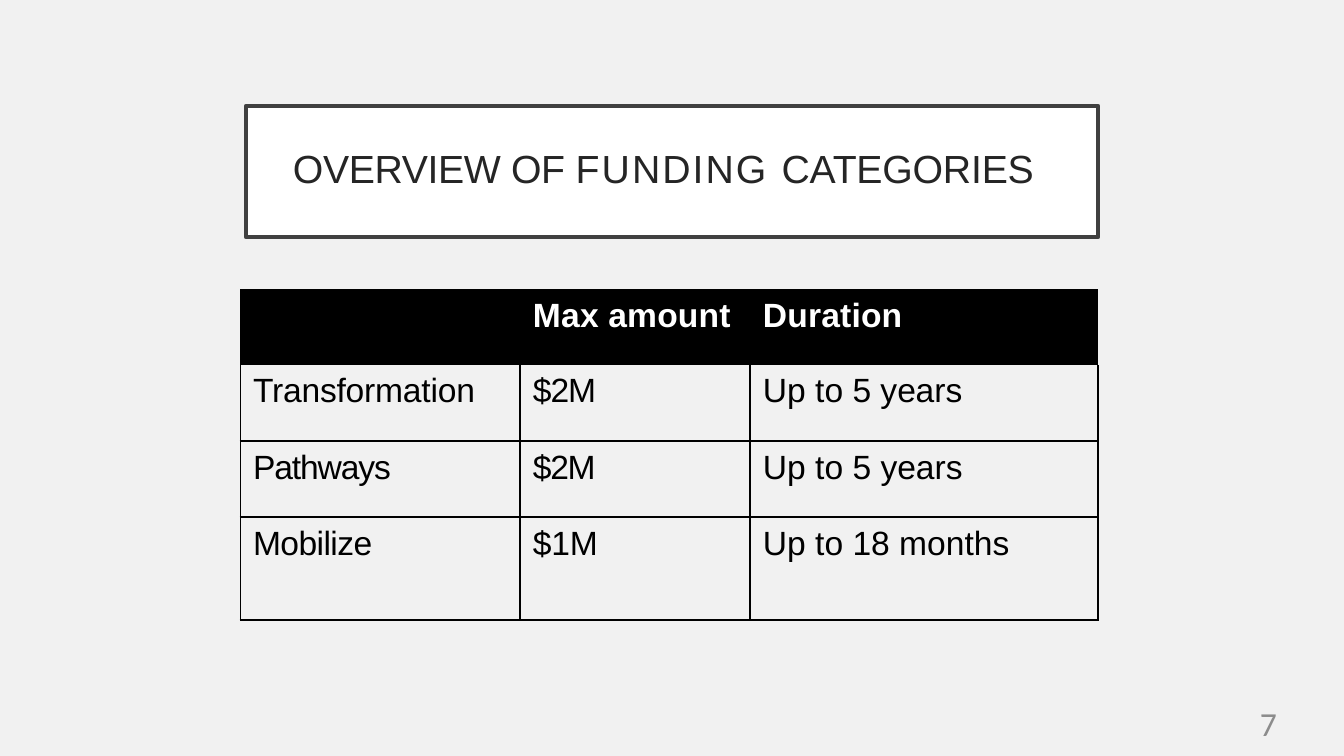
from lxml.etree import SubElement
from pptx import Presentation
from pptx.dml.color import RGBColor
from pptx.enum.text import MSO_ANCHOR, MSO_AUTO_SIZE, PP_ALIGN
from pptx.oxml.ns import qn
from pptx.util import Emu, Pt

BLACK = RGBColor(0x00, 0x00, 0x00)
WHITE = RGBColor(0xFF, 0xFF, 0xFF)
PALE = RGBColor(0xF1, 0xF1, 0xF1)
FRAME = RGBColor(0x40, 0x40, 0x40)
INK = RGBColor(0x25, 0x25, 0x25)
GREY = RGBColor(0x8C, 0x8C, 0x8C)

YEARS = [("y", -0.3), ("ea", -0.1), ("rs", 0)]
TITLE = [("OVERVIEW OF ", -0.2), ("FUNDING ", 1.1), ("CATEGORIES", -0.1)]
ROWS = [
    [[], [("Max amount", 0.1)], [("Duration", 0.1)]],
    [[("Transformation", -0.1)], [("$2M", -0.6)], [("Up to ", 0), ("5 ", -0.1)] + YEARS],
    [[("Pathways", -0.6)], [("$2M", -0.7)], [("Up to 5 ", 0)] + YEARS],
    [[("Mobilize", -0.3)], [("$1M", -0.1)], [("Up to 18 months", 0)]],
]
COL_WIDTHS = [280, 230, 348]
ROW_HEIGHTS = [76, 76, 76, 103]
SPACE_BEFORE = [3.3, 2.5, 3, 3]
TOP_MARGINS = [8, 7, 8, 8]


def px(n):
    """Turn px into EMU."""
    return Emu(round(n * 9144000 / 1344))


def set_attrs(obj, values):
    """Set each attribute named in a dict."""
    for name, value in values.items():
        setattr(obj, name, value)


def set_margins(obj, top=0):
    """Clear the text margins but for the top one."""
    set_attrs(obj, {"margin_left": 0, "margin_right": 0, "margin_bottom": 0,
                    "margin_top": px(top)})


def add_runs(p, runs, font, color, indent=0, **para):
    """Fill a paragraph with letter-spaced runs."""
    set_attrs(p, para)
    p._p.get_or_add_pPr().set("marL", str(px(indent)))
    for text, spacing in runs:
        r = p.add_run()
        r.text = text
        set_attrs(r.font, font)
        r.font.color.rgb = color
        r._r.get_or_add_rPr().set("spc", str(round(spacing * 100)))


def set_borders(cell, widths):
    """Draw the left, right, top and bottom cell borders, none at zero."""
    tcPr = cell._tc.get_or_add_tcPr()
    for side, width in zip("LRTB", widths):
        ln = SubElement(tcPr, qn(f"a:ln{side}"), w=str(Pt(width)))
        if width:
            fill = SubElement(ln, qn("a:solidFill"))
            SubElement(fill, qn("a:srgbClr"), val=str(BLACK))
        else:
            SubElement(ln, qn("a:noFill"))


def format_title(sp):
    """Place and fill the framed title."""
    set_attrs(sp, {"left": px(246), "top": px(106), "width": px(852), "height": px(131)})
    sp.fill.solid()
    sp.fill.fore_color.rgb = WHITE
    sp.line.color.rgb = FRAME
    sp.line.width = Pt(2.5)
    tf = sp.text_frame
    set_margins(tf, 38)
    set_attrs(tf, {"word_wrap": True, "auto_size": MSO_AUTO_SIZE.NONE,
                   "vertical_anchor": MSO_ANCHOR.TOP})
    add_runs(tf.paragraphs[0], TITLE, {"name": "Arial", "size": Pt(21)}, INK, 47,
             alignment=PP_ALIGN.LEFT, space_before=Pt(20.3))


def add_funding_table(s):
    """Add the table of funding categories."""
    table = s.shapes.add_table(len(ROWS), len(COL_WIDTHS), px(240), px(289),
                               px(sum(COL_WIDTHS)), px(sum(ROW_HEIGHTS))).table
    set_attrs(table, {"first_row": False, "horz_banding": False})
    for col, width in zip(table.columns, COL_WIDTHS):
        col.width = px(width)
    for i, row in enumerate(ROWS):
        table.rows[i].height = px(ROW_HEIGHTS[i])
        header = i == 0
        font = {"name": "Arial", "size": Pt(18), "bold": header}
        for j, runs in enumerate(row):
            cell = table.cell(i, j)
            left = 1 if j else 0.5
            set_borders(cell, (0, 0, 0, 0) if header else (left, 1, int(i > 1), 1))
            cell.fill.solid()
            cell.fill.fore_color.rgb = BLACK if header else PALE
            set_margins(cell, TOP_MARGINS[i])
            add_runs(cell.text_frame.paragraphs[0], runs, font,
                     WHITE if header else BLACK, 13, space_before=Pt(SPACE_BEFORE[i]))


def add_page_number(s, number):
    """Add the page number at the bottom right."""
    tf = s.shapes.add_textbox(px(968), px(703), px(309), px(38)).text_frame
    set_margins(tf)
    tf.word_wrap = True
    add_runs(tf.paragraphs[0], [(number, 0)], {"name": "Calibri", "size": Pt(18)}, GREY,
             alignment=PP_ALIGN.RIGHT)


def main():
    """Build and save the slide."""
    prs = Presentation()
    set_attrs(prs, {"slide_width": px(1344), "slide_height": px(756)})
    s = prs.slides.add_slide(prs.slide_layouts[5])
    s.background.fill.solid()
    s.background.fill.fore_color.rgb = PALE
    format_title(s.shapes.title)
    add_funding_table(s)
    add_page_number(s, "7")
    prs.save("out.pptx")


if __name__ == "__main__":
    main()
